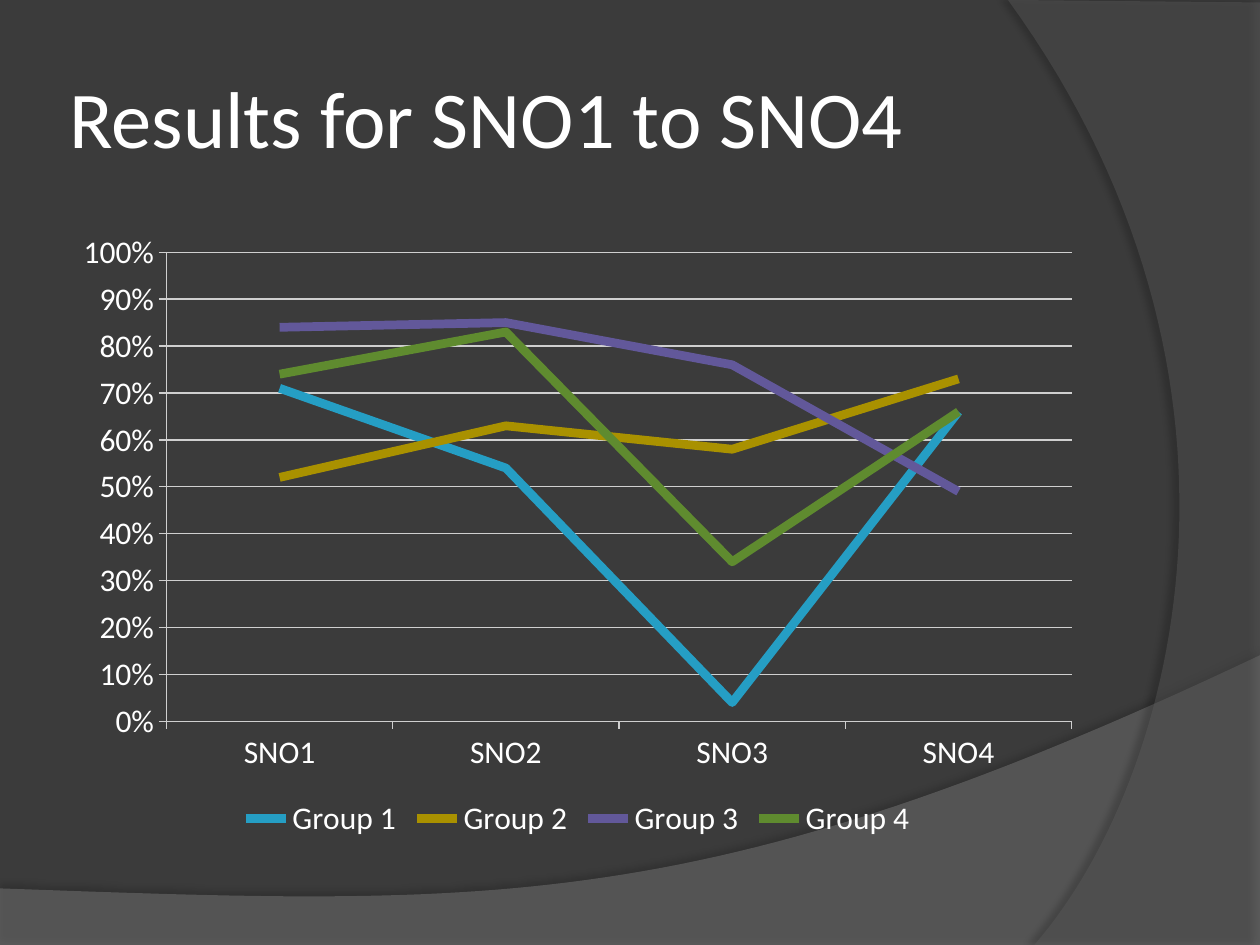
from dataclasses import dataclass

from lxml.etree import SubElement
from pptx import Presentation
from pptx.chart.data import CategoryChartData
from pptx.dml.color import RGBColor
from pptx.enum.chart import XL_CHART_TYPE, XL_LEGEND_POSITION, XL_MARKER_STYLE, XL_TICK_MARK
from pptx.enum.text import MSO_ANCHOR, MSO_AUTO_SIZE, PP_ALIGN
from pptx.oxml.ns import qn
from pptx.util import Cm, Pt


@dataclass(frozen=True)
class Theme:
    font: str = "Calibri"
    title_size: int = 46
    chart_size: int = 18
    background: str = "3B3B3B"
    text: str = "FFFFFF"
    grid: str = "CFCFCF"
    wave: str = "7F7F7F"
    side: str = "5E5E5E"
    groups: tuple = ("259EC4", "A99100", "62589A", "5F8B2F")


THEME = Theme()
QUESTIONS = ("SNO1", "SNO2", "SNO3", "SNO4")
RESULTS = {
    "Group 1": (0.71, 0.54, 0.04, 0.66),
    "Group 2": (0.52, 0.63, 0.58, 0.73),
    "Group 3": (0.84, 0.85, 0.76, 0.49),
    "Group 4": (0.74, 0.83, 0.34, 0.66),
}


def rgb(color):
    return RGBColor.from_string(color)


def style_font(font, size):
    font.name = THEME.font
    font.size = Pt(size)
    font.color.rgb = rgb(THEME.text)


def bezier(start, control_1, control_2, end, steps=60):
    """Points along a cubic curve, without its start."""
    curve = []
    for step in range(1, steps + 1):
        t = step / steps
        weights = ((1 - t) ** 3, 3 * t * (1 - t) ** 2, 3 * t * t * (1 - t), t ** 3)
        curve.append(tuple(
            sum(weight * value for weight, value in zip(weights, values))
            for values in zip(start, control_1, control_2, end)))
    return curve


def add_swoosh(slide, corners, curve, color, opacity, shadow_opacity, distance, angle):
    """Translucent panel: straight corners in cm, then a curve from the last one."""
    outline = [(Cm(x), Cm(y)) for x, y in corners + bezier(corners[-1], *curve)]
    builder = slide.shapes.build_freeform(*outline[0])
    builder.add_line_segments(outline[1:], close=True)
    swoosh = builder.convert_to_shape()
    swoosh.fill.solid()
    swoosh.fill.fore_color.rgb = rgb(color)
    swoosh.line.fill.background()
    swoosh.shadow.inherit = False

    # Fill transparency and soft outer shadow
    properties = swoosh._element.spPr
    fill_color = properties.find(qn("a:solidFill")).find(qn("a:srgbClr"))
    SubElement(fill_color, qn("a:alpha"), val=str(opacity * 1000))
    shadow = SubElement(
        properties.find(qn("a:effectLst")), qn("a:outerShdw"),
        blurRad=str(Pt(4)), dist=str(Pt(distance)), dir=str(angle * 60000),
        algn="ctr", rotWithShape="0")
    shadow_color = SubElement(shadow, qn("a:srgbClr"), val="000000")
    SubElement(shadow_color, qn("a:alpha"), val=str(shadow_opacity * 1000))


def set_title(slide, wording):
    title = slide.shapes.title
    title.left, title.top, title.width, title.height = Cm(1.27), Cm(0.76), Cm(20.75), Cm(3.18)
    frame = title.text_frame
    frame.text = wording
    frame.auto_size = MSO_AUTO_SIZE.NONE
    frame.word_wrap = True
    frame.vertical_anchor = MSO_ANCHOR.MIDDLE
    frame.margin_left = frame.margin_right = Cm(0.13)
    frame.margin_top = frame.margin_bottom = Cm(0.13)
    frame.paragraphs[0].alignment = PP_ALIGN.LEFT
    style_font(frame.paragraphs[0].runs[0].font, THEME.title_size)
    # Keep the title in front of the decoration
    slide.shapes._spTree.append(title._element)


def style_line(line, color, width):
    line.color.rgb = rgb(color)
    line.width = Pt(width)


def add_results_chart(slide):
    data = CategoryChartData(number_format="0%")
    data.categories = QUESTIONS
    for group, scores in RESULTS.items():
        data.add_series(group, scores)
    chart = slide.shapes.add_chart(
        XL_CHART_TYPE.LINE, Cm(1.27), Cm(4.45), Cm(20.75), Cm(12.57), data).chart
    style_font(chart.font, THEME.chart_size)
    chart.has_title = False
    chart.has_legend = True
    chart.legend.position = XL_LEGEND_POSITION.BOTTOM
    chart.legend.include_in_layout = False

    # Axes and gridlines
    for axis in (chart.category_axis, chart.value_axis):
        axis.major_tick_mark = XL_TICK_MARK.OUTSIDE
        axis.minor_tick_mark = XL_TICK_MARK.NONE
        style_line(axis.format.line, THEME.grid, 0.75)
    scale = chart.value_axis
    scale.minimum_scale, scale.maximum_scale, scale.major_unit = 0, 1, 0.1
    scale.tick_labels.number_format = "0%"
    scale.tick_labels.number_format_is_linked = False
    scale.has_major_gridlines = True
    style_line(scale.major_gridlines.format.line, THEME.grid, 0.75)

    # One plain line per group
    chart.plots[0].vary_by_categories = False
    for group, color in zip(chart.plots[0].series, THEME.groups):
        group.smooth = False
        group.marker.style = XL_MARKER_STYLE.NONE
        style_line(group.format.line, color, 5)


def main():
    deck = Presentation()
    deck.slide_width, deck.slide_height = Cm(25.4), Cm(19.05)
    slide = deck.slides.add_slide(deck.slide_layouts[5])
    slide.background.fill.solid()
    slide.background.fill.fore_color.rgb = rgb(THEME.background)

    # Bottom wave and right-hand arc
    add_swoosh(slide, [(0, 17.91), (0, 19.08), (25.4, 19.08), (25.4, 13.21)],
               [(14.2, 18.52), (9.93, 18.26), (0, 17.91)],
               THEME.wave, 45, 35, 3.5, 270)
    add_swoosh(slide, [(25.4, 0.05), (25.4, 19.05), (20.85, 19.05)],
               [(23.75, 15.72), (25.86, 7.62), (20.32, 0)],
               THEME.side, 40, 45, 4, 180)

    set_title(slide, "Results for SNO1 to SNO4")
    add_results_chart(slide)
    deck.save("out.pptx")


if __name__ == "__main__":
    main()
